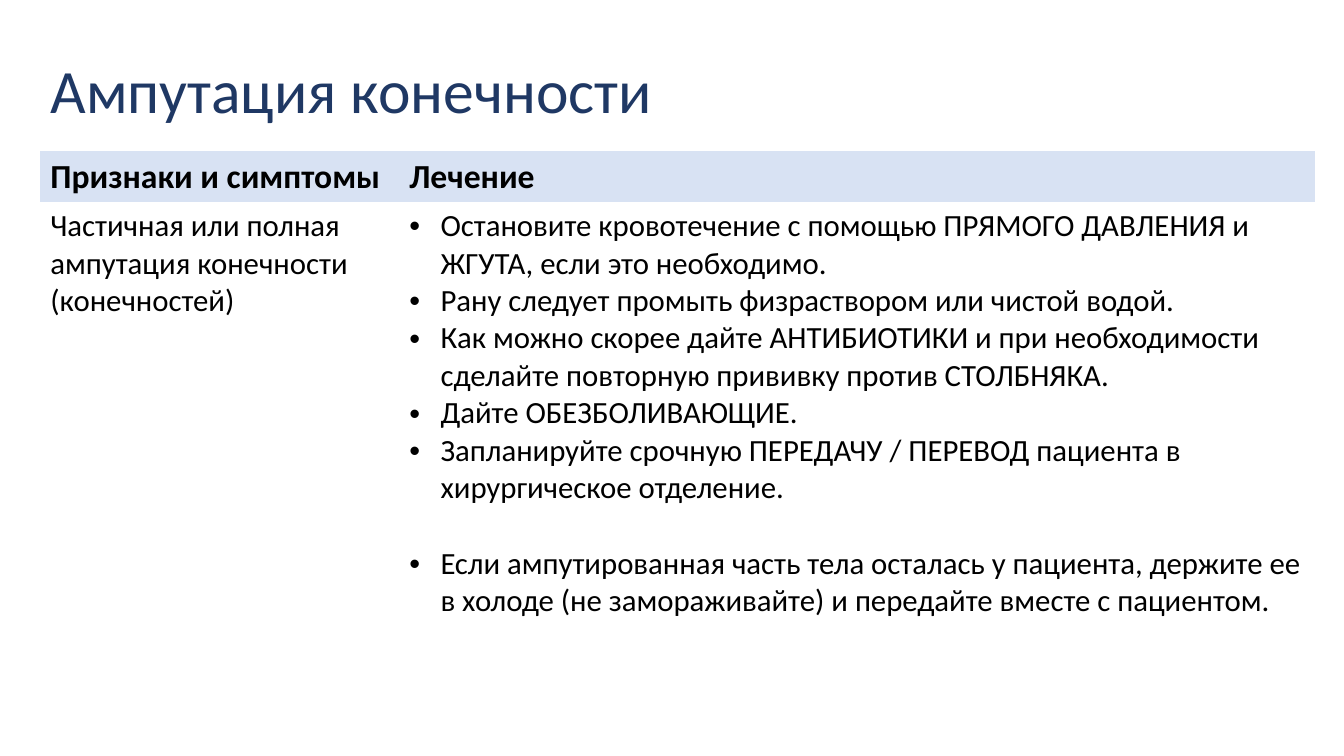
from dataclasses import dataclass

from lxml import etree
from pptx import Presentation
from pptx import util as u
from pptx.dml.color import RGBColor
from pptx.enum import text
from pptx.oxml import ns

PX = u.Inches(1) // 100


@dataclass(frozen=True)
class Theme:
    font: str = "Calibri"
    title: str = "1F3864"
    ink: str = "000000"
    header_fill: str = "D8E2F3"
    title_size: int = 44
    header_size: int = 24
    body_size: int = 22
    line_gap: int = 27
    plain_table: str = "{2D5ABB26-0587-4C30-8999-92F81FD0307C}"


THEME = Theme()

TITLE = "Ампутация конечности"
HEADERS = ["Признаки и симптомы", "Лечение"]
SYMPTOMS = "Частичная или полная ампутация конечности (конечностей)"
TREATMENT = [
    "Остановите кровотечение с помощью ПРЯМОГО ДАВЛЕНИЯ и ЖГУТА, если это необходимо.",
    "Рану следует промыть физраствором или чистой водой.",
    "Как можно скорее дайте АНТИБИОТИКИ и при необходимости сделайте повторную прививку против СТОЛБНЯКА.",
    "Дайте ОБЕЗБОЛИВАЮЩИЕ.",
    "Запланируйте срочную ПЕРЕДАЧУ / ПЕРЕВОД пациента в хирургическое отделение.",
]
TRANSFER_NOTE = (
    "Если ампутированная часть тела осталась у пациента, держите ее в холоде "
    "(не замораживайте) и передайте вместе с пациентом."
)


def px(*lengths):
    return [u.Emu(length * PX) for length in lengths]


def style_font(font, color, **values):
    for name, value in {"name": THEME.font, **values}.items():
        setattr(font, name, value)
    font.color.rgb = RGBColor.from_string(color)


def add_bullet(p, indent):
    pPr = p._p.get_or_add_pPr()
    pPr.set("marL", str(indent * PX))
    pPr.set("indent", str(-indent * PX))
    etree.SubElement(pPr, ns.qn("a:buFont"), typeface="Arial")
    etree.SubElement(pPr, ns.qn("a:buChar"), char="•")


def write_cell(cell, lines, size, bold=False, bullets=False):
    tf = cell.text_frame
    for i, line in enumerate(lines):
        p = tf.paragraphs[0] if i == 0 else tf.add_paragraph()
        if bullets:
            add_bullet(p, 31)
        r = p.add_run()
        r.text = line
        style_font(r.font, THEME.ink, size=u.Pt(size), bold=bold)


def place_title(slide, box):
    sp = slide.shapes.title
    for name, value in zip(("left", "top", "width", "height"), px(*box)):
        setattr(sp, name, value)
    tf = sp.text_frame
    frame_format = {
        "word_wrap": True,
        "auto_size": text.MSO_AUTO_SIZE.NONE,
        "vertical_anchor": text.MSO_ANCHOR.MIDDLE,
    }
    for name, value in frame_format.items():
        setattr(tf, name, value)
    p = tf.paragraphs[0]
    p.alignment = text.PP_ALIGN.LEFT
    p.line_spacing = 0.9
    r = p.add_run()
    r.text = TITLE
    style_font(r.font, THEME.title, size=u.Pt(THEME.title_size))


def add_care_table(slide, box, symptom_width=356, header_height=47):
    width, height = box[2:]
    table = slide.shapes.add_table(2, 2, *px(*box)).table
    table.first_row = table.horz_banding = False
    table._tbl.tblPr.find(ns.qn("a:tableStyleId")).text = THEME.plain_table
    for column, size in zip(table.columns, px(symptom_width, width - symptom_width)):
        column.width = size
    for row, size in zip(table.rows, px(header_height, height - header_height)):
        row.height = size

    for i, header in enumerate(HEADERS):
        cell = table.cell(0, i)
        cell.fill.solid()
        cell.fill.fore_color.rgb = RGBColor.from_string(THEME.header_fill)
        write_cell(cell, [header], THEME.header_size, bold=True)

    symptoms, treatment = table.cell(1, 0), table.cell(1, 1)
    for cell in (symptoms, treatment):
        cell.fill.background()
    write_cell(symptoms, [SYMPTOMS], THEME.body_size)
    write_cell(treatment, [*TREATMENT, TRANSFER_NOTE], THEME.body_size, bullets=True)
    treatment.text_frame.paragraphs[-1].space_before = u.Pt(THEME.line_gap)


def main():
    prs = Presentation()
    prs.slide_width, prs.slide_height = px(1333, 750)
    slide = prs.slides.add_slide(prs.slide_layouts[5])
    place_title(slide, (40, 20, 1150, 145))
    add_care_table(slide, (40, 150, 1264, 577))
    prs.save("out.pptx")


if __name__ == "__main__":
    main()
